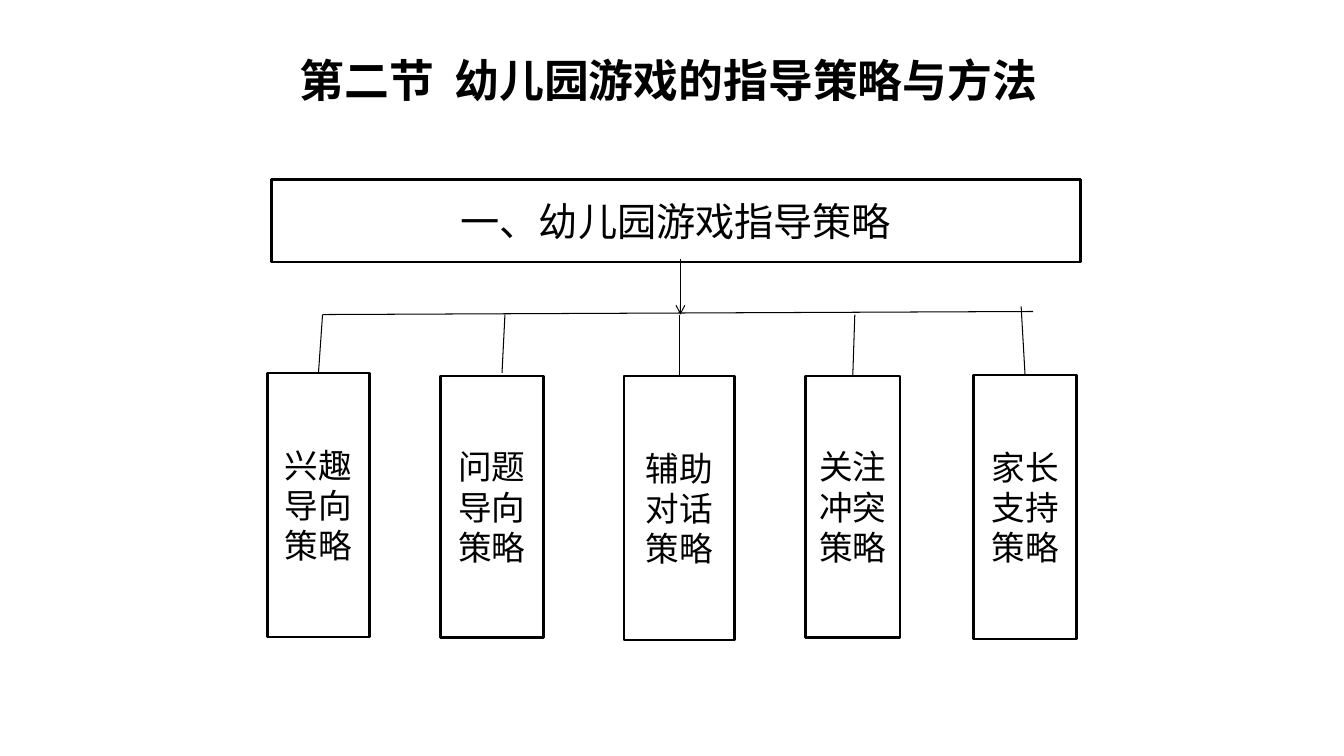
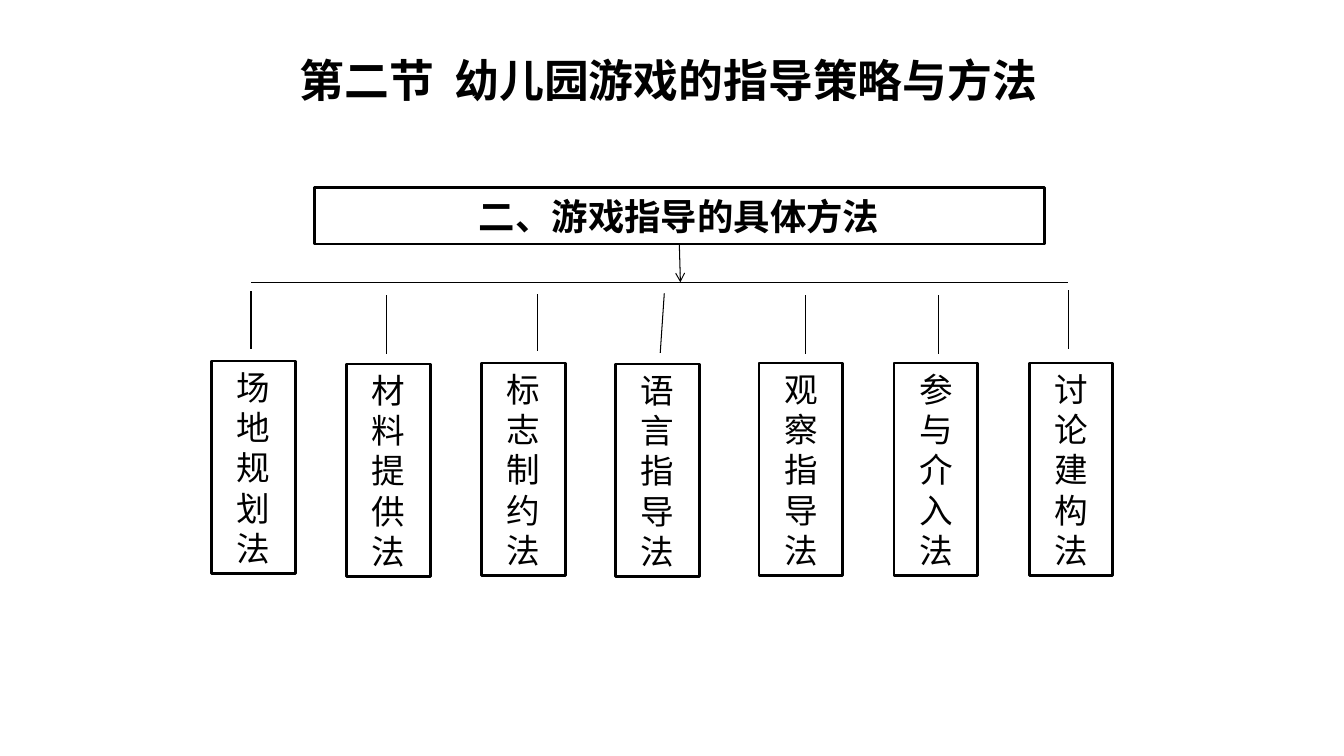
from dataclasses import dataclass
from typing import NamedTuple, Optional

from lxml.etree import SubElement
from pptx import Presentation
from pptx.dml.color import RGBColor
from pptx.enum.shapes import MSO_CONNECTOR, MSO_SHAPE
from pptx.enum.text import MSO_ANCHOR, MSO_AUTO_SIZE, PP_ALIGN
from pptx.oxml.ns import qn
from pptx.util import Pt


@dataclass(frozen=True)
class Theme:
    ink: RGBColor = RGBColor(0, 0, 0)
    heading_font: str = "Noto Sans CJK SC"
    branch_font: str = "Arial"
    title_size: float = 32
    branch_size: float = 24
    border: float = 2
    link: float = 0.75


class Box(NamedTuple):
    x: float
    y: float
    w: float
    h: float


class Branch(NamedTuple):
    text: str
    box: Box
    head: tuple
    foot: Optional[tuple] = None  # None: the stem joins the box


class Tree(NamedTuple):
    origin: tuple
    heading: str
    heading_size: float
    heading_bold: bool
    heading_box: Box
    arrow_start: Optional[tuple]  # None: the arrow leaves the heading box
    arrow_end: tuple
    rail: tuple
    branches: list


THEME = Theme()
TITLE = "第二节  幼儿园游戏的指导策略与方法"
TITLE_BOX = Box(102.2, 29.5, 751, 54.7)
TOP, BOTTOM = 0, 2

STRATEGIES = Tree(
    (190.8, 128.2), "一、幼儿园游戏指导策略", 28, False, Box(2.9, 0, 578.2, 59),
    (295.2, 56.9), (295.2, 96.5), ((39.6, 96.5), (547.2, 94.3)),
    [
        Branch("兴趣导向策略", Box(0, 138.2, 73.4, 188.6), (39.6, 96.5)),
        Branch("问题导向策略", Box(123.8, 140.4, 73.4, 186.5), (169.9, 96.5), (167.8, 138.2)),
        Branch("辅助对话策略", Box(254.9, 140.4, 79.2, 188.6), (294.5, 96.5)),
        Branch("关注冲突策略", Box(384.5, 140.4, 67.7, 186.5), (419.8, 96.5)),
        Branch("家长支持策略", Box(504.7, 139.7, 73.4, 188.6), (538.6, 90.7)),
    ],
)


def method(text, x, y, head, foot):
    """Branch of the methods tree, where all boxes have one size."""
    return Branch(text, Box(x, y, 59.8, 151.9), head, foot)


METHODS = Tree(
    (151.2, 134), "二、游戏指导的具体方法", 26, True, Box(73.4, 0, 521.3, 40.3),
    None, (334.8, 67.7), ((28.1, 67.7), (612, 67.7)),
    [
        method("场地规划法", 0, 123.8, (28.1, 74.2), (28.1, 115.2)),
        method("材料提供法", 96.5, 126, (124.6, 77), (124.6, 118.8)),
        method("标志制约法", 193, 125.3, (232.6, 76.3), (232.6, 116.6)),
        method("语言指导法", 288.7, 126, (323.3, 75.6), (320.4, 118.1)),
        method("观察指导法", 391, 125.3, (424.1, 77), (424.1, 118.8)),
        method("参与介入法", 487.4, 125.3, (519.1, 77), (519.1, 118.8)),
        method("讨论建构法", 583.9, 125.3, (612, 73.4), (612, 115.2)),
    ],
)


def write(sp, text, font, size, bold=False):
    """Centre one run of text in a shape."""
    tf = sp.text_frame
    tf.word_wrap = True
    tf.auto_size = MSO_AUTO_SIZE.NONE
    tf.vertical_anchor = MSO_ANCHOR.MIDDLE
    p = tf.paragraphs[0]
    p.alignment = PP_ALIGN.CENTER
    r = p.add_run()
    r.text = text
    r.font.name, r.font.size, r.font.bold = font, Pt(size), bold
    r.font.color.rgb = THEME.ink
    SubElement(r.font._element, qn("a:ea")).set("typeface", font)


def add_title(s):
    sp = s.shapes.title
    sp.left, sp.top, sp.width, sp.height = map(Pt, TITLE_BOX)
    write(sp, TITLE, THEME.heading_font, THEME.title_size, True)


def add_box(s, origin, box, text, font, size, bold=False):
    sp = s.shapes.add_shape(
        MSO_SHAPE.RECTANGLE, Pt(origin[0] + box.x), Pt(origin[1] + box.y), Pt(box.w), Pt(box.h))
    sp.shadow.inherit = False
    sp.fill.background()
    sp.line.color.rgb = THEME.ink
    sp.line.width = Pt(THEME.border)
    write(sp, text, font, size, bold)
    return sp


def add_link(s, origin, start, end, arrow=False):
    ox, oy = origin
    line = s.shapes.add_connector(
        MSO_CONNECTOR.STRAIGHT,
        Pt(ox + start[0]), Pt(oy + start[1]), Pt(ox + end[0]), Pt(oy + end[1]))
    line.line.color.rgb = THEME.ink
    line.line.width = Pt(THEME.link)
    if arrow:
        SubElement(line.line._get_or_add_ln(), qn("a:tailEnd")).set("type", "arrow")
    SubElement(line._element.spPr, qn("a:effectLst"))
    return line


def add_tree(s, tree):
    # Heading and the arrow down to the rail
    heading = add_box(s, tree.origin, tree.heading_box, tree.heading,
                      THEME.heading_font, tree.heading_size, tree.heading_bold)
    arrow = add_link(s, tree.origin, tree.arrow_start or tree.arrow_end, tree.arrow_end, True)
    if tree.arrow_start is None:
        arrow.begin_connect(heading, BOTTOM)

    # Rail
    add_link(s, tree.origin, *tree.rail)

    # Branches with their stems
    for branch in tree.branches:
        sp = add_box(s, tree.origin, branch.box, branch.text,
                     THEME.branch_font, THEME.branch_size)
        stem = add_link(s, tree.origin, branch.head, branch.foot or branch.head)
        if branch.foot is None:
            stem.end_connect(sp, TOP)


def main():
    prs = Presentation()
    prs.slide_width, prs.slide_height = Pt(960), Pt(540)
    title_only = prs.slide_layouts[5]
    for tree in (STRATEGIES, METHODS):
        s = prs.slides.add_slide(title_only)
        add_title(s)
        add_tree(s, tree)
    prs.save("out.pptx")


if __name__ == "__main__":
    main()
